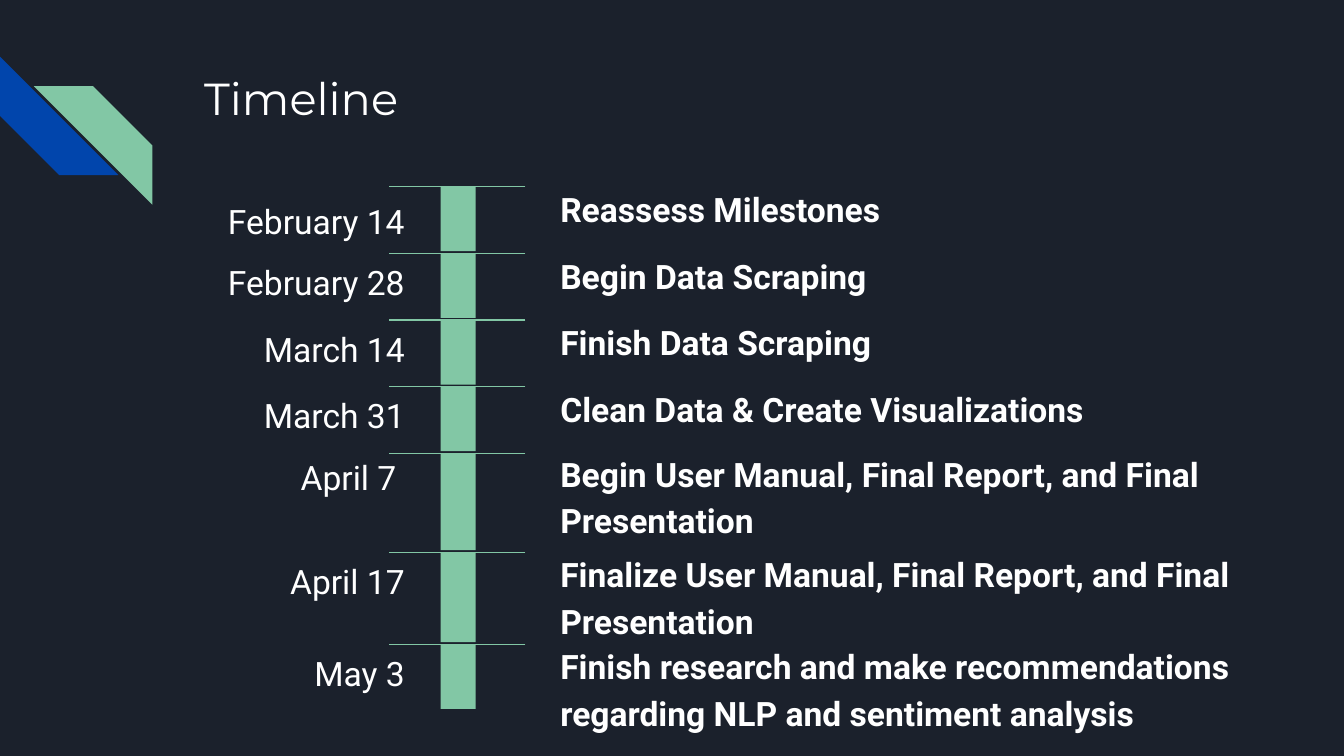
from lxml import etree
from pptx import Presentation
from pptx import util as u
from pptx.dml import color
from pptx.enum import shapes, text
from pptx.oxml import ns

NAVY, BLUE, GREEN, WHITE = "1B212C", "0145AC", "82C7A5", "FFFFFF"
FIRST_TOP, GAP = 3.53, 0.04
HEADING_RISE, DATE_RISE = 0.24, 0.2
HEADING_HEIGHT, DATE_HEIGHT = 0.33, 0.84

MILESTONES = [
    ("February 14", "Reassess Milestones", 1.22, 1, 0.1),
    ("February 28", "Begin Data Scraping", 1.22, 1, 0),
    ("March 14", "Finish Data Scraping", 1.22, 1, 0),
    ("March 31", "Clean Data & Create Visualizations", 1.22, 1, 0),
    ("April 7 ", "Begin User Manual, Final Report, and Final Presentation", 1.83, 1.5, 0),
    ("April 17", "Finalize User Manual, Final Report, and Final Presentation", 1.7, 1, 0),
    ("May 3", "Finish research and make recommendations regarding NLP and sentiment analysis", 1.22, 1, 0),
]


def paint(target, hex_color):
    target.solid()
    target.fore_color.rgb = color.RGBColor.from_string(hex_color)


def apply(target, formats):
    for name, value in formats.items():
        setattr(target, name, value)


def write(frame, wording, size, face, bold=False, align=text.PP_ALIGN.LEFT, spacing=1.0):
    inset = u.Cm(0.25)
    frame.text = wording
    apply(frame, {
        "word_wrap": True, "auto_size": text.MSO_AUTO_SIZE.NONE,
        "vertical_anchor": text.MSO_ANCHOR.TOP,
        "margin_left": inset, "margin_right": inset,
        "margin_top": inset, "margin_bottom": inset,
    })
    paragraph = frame.paragraphs[0]
    apply(paragraph, {"alignment": align, "line_spacing": spacing})
    font = paragraph.runs[0].font
    apply(font, {"size": u.Pt(size), "name": face, "bold": bold})
    paint(font.fill, WHITE)


def add_block(slide, preset, left, top, width, height, hex_color):
    block = slide.shapes.add_shape(preset, u.Cm(left), u.Cm(top), u.Cm(width), u.Cm(height))
    block.shadow.inherit = False
    paint(block.fill, hex_color)
    block.line.fill.background()
    return block


def add_rule(slide, top):
    rule = slide.shapes.add_connector(
        shapes.MSO_CONNECTOR.STRAIGHT, u.Cm(9.93), u.Cm(top), u.Cm(7.36), u.Cm(top))
    paint(rule.line.fill, GREEN)
    rule.line.width = u.Pt(0.75)
    etree.SubElement(rule._element.spPr, ns.qn("a:effectLst"))


def add_label(slide, wording, left, top, width, height, **formats):
    label = slide.shapes.add_textbox(u.Cm(left), u.Cm(top), u.Cm(width), u.Cm(height))
    write(label.text_frame, wording, 18, "Roboto", spacing=1.15, **formats)


def add_stripes(slide):
    stripe = shapes.MSO_SHAPE.DIAGONAL_STRIPE
    lower = add_block(slide, stripe, 0, 1.07, 2.24, 2.24, BLUE)
    lower.rotation = 270
    upper = add_block(slide, stripe, 0.64, 1.63, 2.24, 2.24, GREEN)
    upper._element.spPr.get_or_add_xfrm().set("flipH", "1")


def add_title(slide, wording):
    title = slide.shapes.title
    apply(title, {"left": u.Cm(3.61), "top": u.Cm(1.09),
                  "width": u.Cm(19.56), "height": u.Cm(2.54)})
    write(title.text_frame, wording, 24, "Montserrat")


def add_milestone(slide, top, date, heading, height, scale, date_shift):
    add_block(slide, shapes.MSO_SHAPE.RECTANGLE, 8.33, top, 0.66, height, GREEN)
    add_rule(slide, top)
    add_label(slide, heading, 10.34, top - HEADING_RISE * scale,
              13.31, HEADING_HEIGHT * scale, bold=True)
    add_label(slide, date, 3.68, top - DATE_RISE * scale + date_shift,
              4.22, DATE_HEIGHT * scale, align=text.PP_ALIGN.RIGHT)


def main():
    deck = Presentation()
    apply(deck, {"slide_width": u.Cm(25.4), "slide_height": u.Cm(14.29)})
    slide = deck.slides.add_slide(deck.slide_layouts[5])
    paint(slide.background.fill, NAVY)
    add_stripes(slide)
    add_title(slide, "Timeline")
    top = FIRST_TOP
    for date, heading, height, scale, date_shift in MILESTONES:
        add_milestone(slide, top, date, heading, height, scale, date_shift)
        top += height + GAP
    deck.save("out.pptx")


if __name__ == "__main__":
    main()
